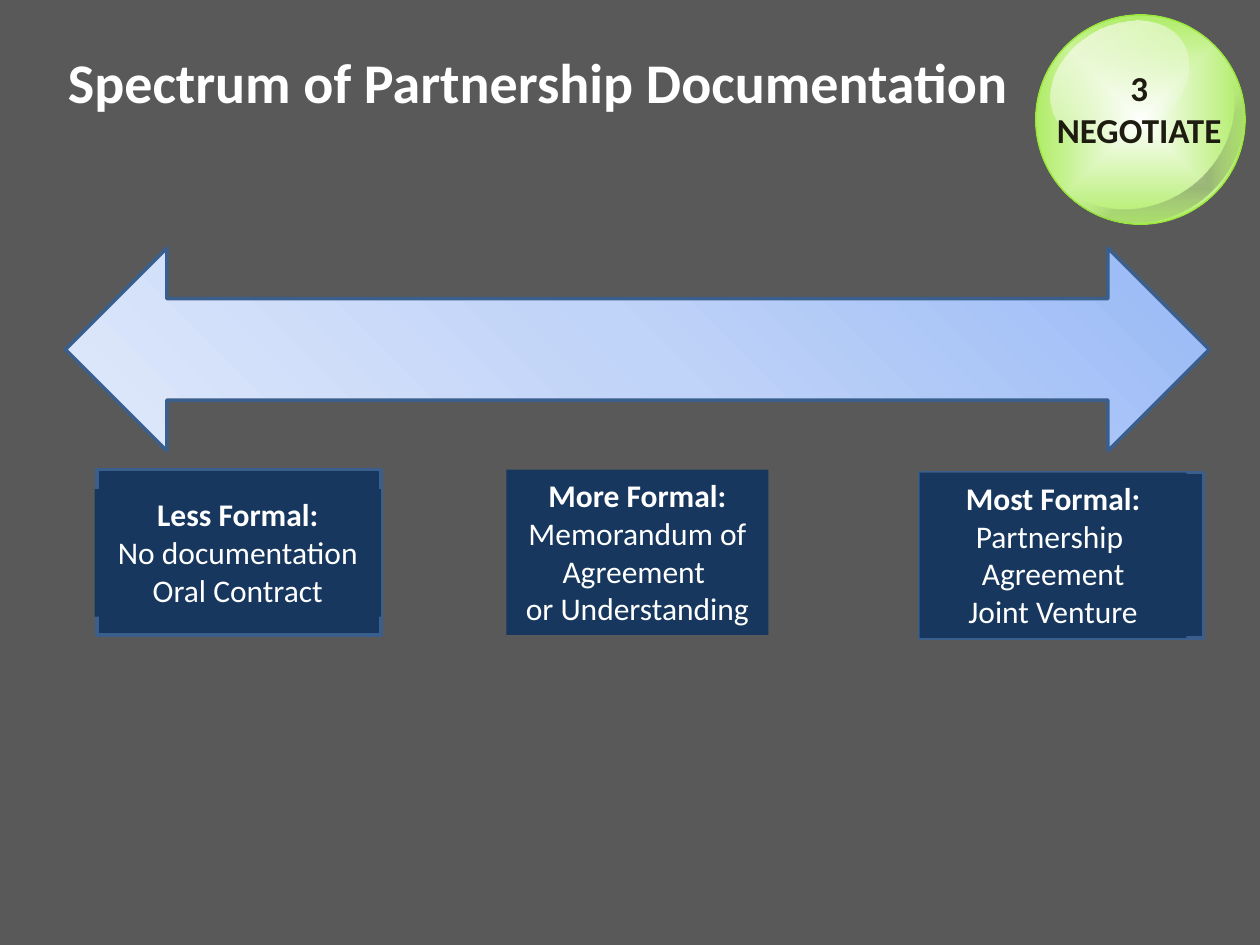
"""Build the partnership documentation spectrum slide."""
from dataclasses import dataclass
from typing import Any, Optional

from lxml import etree
from pptx import Presentation
from pptx import util as u
from pptx.dml.color import RGBColor
from pptx.enum import shapes, text
from pptx.oxml import ns

BACKGROUND = RGBColor(0x59, 0x59, 0x59)
WHITE = RGBColor(0xFF, 0xFF, 0xFF)
CREAM = RGBColor(0xFF, 0xFC, 0xF9)
BLACK = RGBColor(0, 0, 0)
INK = RGBColor(0x1E, 0x1C, 0x11)
NAVY = RGBColor(0x17, 0x37, 0x5E)
OUTLINE = RGBColor(0x3A, 0x5F, 0x8C)
GREEN = RGBColor(0x98, 0xE7, 0x39)
SKY = RGBColor(0x98, 0xB9, 0xF6)
PALE_SKY = RGBColor(0xC0, 0xD3, 0xF8)
MIST = RGBColor(0xE0, 0xE9, 0xFB)
KINDS = shapes.MSO_SHAPE


@dataclass(frozen=True)
class Box:
    left: float
    top: float
    width: float
    height: float

    def lengths(self) -> list[u.Length]:
        return [u.Cm(v) for v in (self.left, self.top, self.width, self.height)]


@dataclass(frozen=True)
class Stop:
    position: int
    color: RGBColor
    opacity: int = 100


@dataclass(frozen=True)
class Gradient:
    stops: tuple[Stop, ...]
    angle: Optional[int] = None


@dataclass(frozen=True)
class Figure:
    kind: KINDS
    box: Box
    fill: RGBColor | Gradient
    line: Optional[RGBColor] = None
    line_width: float = 2
    rotation: float = 0
    flipped: bool = False
    adjustment: Optional[float] = None


@dataclass(frozen=True)
class Level:
    label: Box
    lines: tuple[str, ...]
    frame: Optional[Box] = None


ARROW = Figure(
    KINDS.LEFT_RIGHT_ARROW, Box(1.32, 5, 23.06, 4.09),
    Gradient((Stop(0, SKY), Stop(50, PALE_SKY), Stop(100, MIST)), 135), OUTLINE)
LEVELS = (
    Level(Box(1.91, 9.86, 5.77, 2.57),
          ("Less Formal:", "No documentation", "Oral Contract"), Box(1.96, 9.47, 5.72, 3.33)),
    Level(Box(10.21, 9.47, 5.28, 3.33),
          ("More Formal:", "Memorandum of Agreement ", "or Understanding")),
    Level(Box(18.54, 9.53, 5.38, 3.33),
          ("Most Formal:", "Partnership ", "Agreement", "Joint Venture"), Box(18.54, 9.53, 5.72, 3.33)),
)
BADGE = (
    Figure(KINDS.OVAL, Box(20.88, 0.3, 4.22, 4.22),
           Gradient((Stop(0, WHITE), Stop(100, GREEN))), GREEN, 0.75, 338.6, True),
    Figure(KINDS.MOON, Box(22.71, 1.27, 1.85, 4.09),
           Gradient((Stop(24, BLACK, 24), Stop(100, WHITE, 0))),
           rotation=53.6, flipped=True, adjustment=0.19),
    Figure(KINDS.OVAL, Box(21.08, 0.53, 2.97, 2.21),
           Gradient((Stop(0, CREAM, 77), Stop(100, WHITE, 0)), 90),
           rotation=329.4, flipped=True),
)


def set_formats(target: Any, formats: dict[str, Any]) -> None:
    for name, value in formats.items():
        setattr(target, name, value)


def add_node(parent: Any, tag: str, **attributes: Any) -> Any:
    return etree.SubElement(parent, ns.qn(tag), {k: str(v) for k, v in attributes.items()})


def apply_gradient(shape: Any, gradient: Gradient) -> None:
    shape.fill.gradient()
    fill = shape.element.spPr.find(ns.qn("a:gradFill"))
    for child in list(fill):
        fill.remove(child)
    stop_list = add_node(fill, "a:gsLst")
    for stop in gradient.stops:
        node = add_node(stop_list, "a:gs", pos=stop.position * 1000)
        color = add_node(node, "a:srgbClr", val=stop.color)
        if stop.opacity < 100:
            add_node(color, "a:alpha", val=stop.opacity * 1000)
    if gradient.angle is None:
        center = add_node(fill, "a:path", path="shape")
        add_node(center, "a:fillToRect", l=50000, t=50000, r=50000, b=50000)
    else:
        add_node(fill, "a:lin", ang=gradient.angle * 60000, scaled=0)


def add_figure(parent: Any, figure: Figure) -> Any:
    shape = parent.add_shape(figure.kind, *figure.box.lengths())
    shape.shadow.inherit = False
    shape.rotation = figure.rotation
    if figure.flipped:
        shape.element.spPr.find(ns.qn("a:xfrm")).set("flipH", "1")
    if figure.adjustment is not None:
        shape.adjustments[0] = figure.adjustment
    if isinstance(figure.fill, Gradient):
        apply_gradient(shape, figure.fill)
    else:
        shape.fill.solid()
        shape.fill.fore_color.rgb = figure.fill
    if figure.line is None:
        shape.line.fill.background()
    else:
        shape.line.color.rgb = figure.line
        shape.line.width = u.Pt(figure.line_width)
    return shape


def write_lines(shape: Any, lines: tuple[str, ...], size: int, color: RGBColor = WHITE,
                alignment: text.PP_ALIGN = text.PP_ALIGN.CENTER, bold_lines: int = 1) -> None:
    frame = shape.text_frame
    set_formats(frame, {"word_wrap": True, "vertical_anchor": text.MSO_ANCHOR.TOP,
                        "auto_size": text.MSO_AUTO_SIZE.SHAPE_TO_FIT_TEXT})
    for index, line in enumerate(lines):
        paragraph = frame.add_paragraph() if index else frame.paragraphs[0]
        paragraph.alignment = alignment
        run = paragraph.add_run()
        run.text = line
        set_formats(run.font, {"name": "Calibri", "size": u.Pt(size), "bold": index < bold_lines})
        run.font.color.rgb = color


def add_level(parent: Any, level: Level) -> None:
    if level.frame:
        parent = parent.add_group_shape().shapes
        add_figure(parent, Figure(KINDS.RECTANGLE, level.frame, NAVY, OUTLINE))
    label = add_figure(parent, Figure(KINDS.RECTANGLE, level.label, NAVY))
    write_lines(label, level.lines, 18)


def main() -> None:
    presentation = Presentation()
    set_formats(presentation, {"slide_width": u.Cm(25.4), "slide_height": u.Cm(19.05)})
    slide = presentation.slides.add_slide(presentation.slide_layouts[6])
    slide.background.fill.solid()
    slide.background.fill.fore_color.rgb = BACKGROUND

    add_figure(slide.shapes, ARROW)
    for level in LEVELS:
        add_level(slide.shapes, level)

    badge = slide.shapes.add_group_shape().shapes
    for figure in BADGE:
        add_figure(badge, figure)
    caption = badge.add_textbox(*Box(20.96, 1.22, 4.01, 2.72).lengths())
    write_lines(caption, ("3", "NEGOTIATE"), 20, INK, bold_lines=2)

    title = slide.shapes.add_textbox(*Box(1.12, 0.84, 19.84, 1.63).lengths())
    write_lines(title, ("Spectrum of Partnership Documentation",), 32, alignment=text.PP_ALIGN.LEFT)
    presentation.save("out.pptx")


if __name__ == "__main__":
    main()
